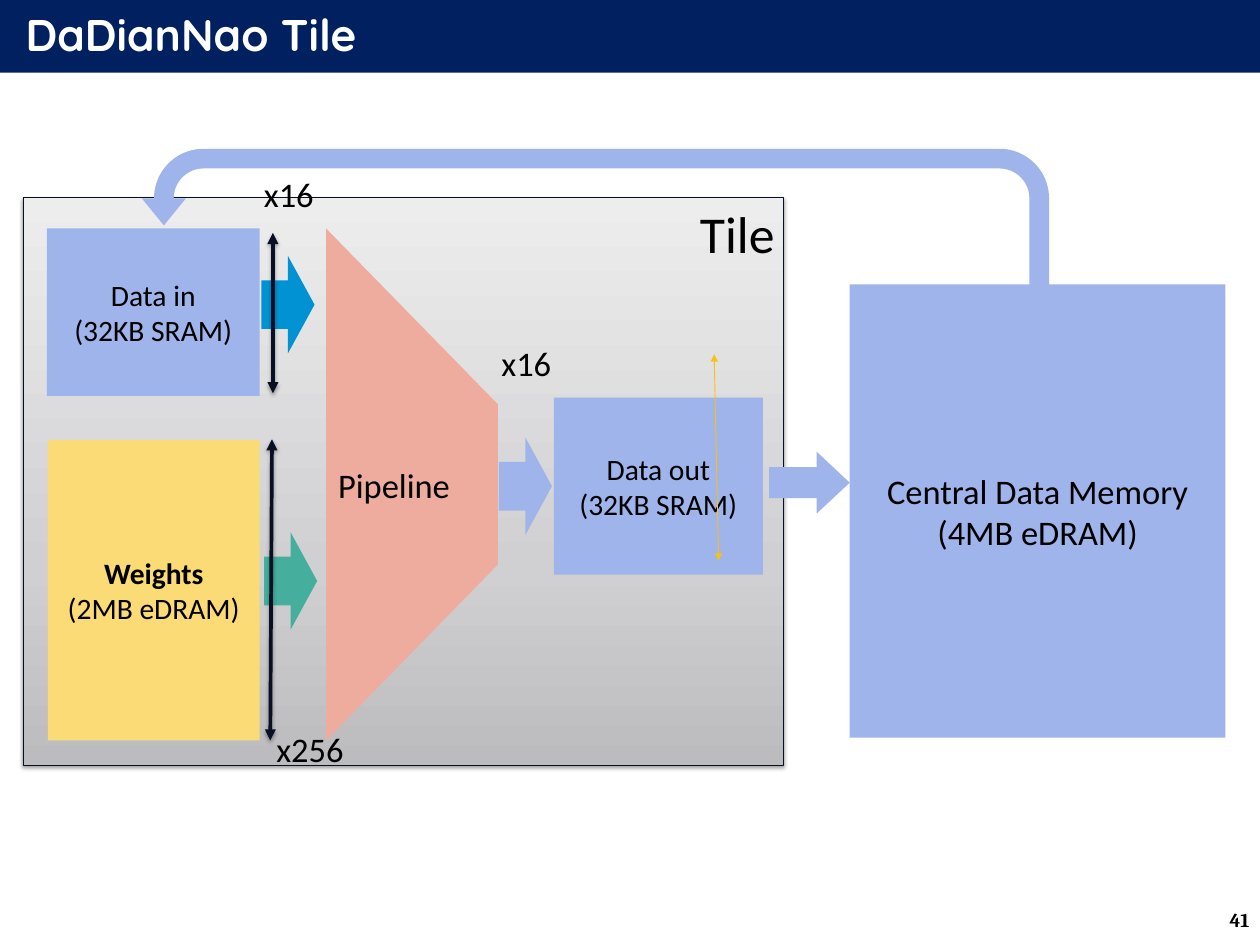
from dataclasses import dataclass
from typing import Optional

from lxml import etree
from pptx import Presentation
from pptx.dml.color import RGBColor
from pptx.enum.shapes import MSO_CONNECTOR, MSO_SHAPE
from pptx.enum.text import MSO_ANCHOR, MSO_AUTO_SIZE, PP_ALIGN
from pptx.oxml.ns import qn
from pptx.util import Emu, Pt

RECTANGLE = MSO_SHAPE.RECTANGLE
TRAPEZOID = MSO_SHAPE.TRAPEZOID
RIGHT_ARROW = MSO_SHAPE.RIGHT_ARROW
U_TURN_ARROW = MSO_SHAPE.U_TURN_ARROW
STRAIGHT = MSO_CONNECTOR.STRAIGHT
LEFT, CENTER, RIGHT = PP_ALIGN.LEFT, PP_ALIGN.CENTER, PP_ALIGN.RIGHT
TOP, MIDDLE = MSO_ANCHOR.TOP, MSO_ANCHOR.MIDDLE
FIXED, GROW = MSO_AUTO_SIZE.NONE, MSO_AUTO_SIZE.SHAPE_TO_FIT_TEXT
EMU_PER_PX = 9144
TITLE_ONLY = 5


@dataclass(frozen=True)
class Theme:
    navy: str = "002060"
    white: str = "FFFFFF"
    black: str = "000000"
    memory: str = "9FB4EA"
    weights: str = "FBDB76"
    pipeline: str = "EDAC9E"
    data_arrow: str = "0092D2"
    weight_arrow: str = "46AE9D"
    output_span: str = "F9C115"
    input_span: str = "081025"
    tile_border: str = "070F25"
    tile_gradient: tuple = ((0, "BCBCBF"), (35, "D0D0D2"), (100, "EDEDEE"))
    body_font: str = "Calibri"
    title_font: str = "Quicksand"
    number_font: str = "Cambria"
    tile_size: int = 42
    title_size: int = 36
    large_size: int = 28
    block_size: int = 24
    number_size: int = 16


THEME = Theme()


@dataclass(frozen=True)
class Box:
    left: int
    top: int
    width: int
    height: int


@dataclass(frozen=True)
class TextStyle:
    size: int
    align: PP_ALIGN = CENTER
    anchor: MSO_ANCHOR = MIDDLE
    font: str = THEME.body_font
    color: str = THEME.black
    bold: bool = False


@dataclass(frozen=True)
class Block:
    box: Box
    fill: str
    lines: tuple[str, ...] = ()
    size: int = THEME.block_size
    bold_first: bool = False


@dataclass(frozen=True)
class Arrow:
    box: Box
    fill: str
    kind: MSO_SHAPE = RIGHT_ARROW
    adjustments: tuple[float, ...] = ()


@dataclass(frozen=True)
class Span:
    start: tuple[int, int]
    end: tuple[int, int]
    color: str
    width: float
    shadow_opacity: Optional[int] = None


@dataclass(frozen=True)
class Label:
    text: str
    box: Box
    style: TextStyle = TextStyle(THEME.large_size, LEFT, TOP)
    resize: MSO_AUTO_SIZE = GROW


TILE = Box(26, 223, 858, 641)
TITLE_BAR = Box(0, -6, 1422, 88)
PIPELINE = Box(176, 450, 578, 194)

BLOCKS = (
    Block(Box(959, 321, 424, 512), THEME.memory, ("Central Data Memory", "(4MB eDRAM)"), THEME.large_size),
    Block(Box(53, 258, 240, 189), THEME.memory, ("Data in", "(32KB SRAM)")),
    Block(Box(54, 497, 239, 339), THEME.weights, ("Weights", "(2MB eDRAM)"), bold_first=True),
    Block(Box(625, 449, 236, 200), THEME.memory, ("Data out", "(32KB SRAM)")),
)
ARROWS = (
    Arrow(Box(563, 494, 60, 110), THEME.memory),
    Arrow(Box(295, 289, 60, 110), THEME.data_arrow),
    Arrow(Box(298, 601, 60, 110), THEME.weight_arrow),
    Arrow(Box(868, 510, 91, 70), THEME.memory, adjustments=(0.5, 0.534)),
    Arrow(Box(160, 168, 1024, 229), THEME.memory, U_TURN_ARROW, (0.097, 0.109, 0.134, 0.438, 0.378)),
)
SPANS = (
    Span((806, 400), (811, 633), THEME.output_span, 0.75),
    Span((308, 263), (308, 444), THEME.input_span, 3, 35),
    Span((307, 496), (305, 836), THEME.input_span, 3, 35),
)
LABELS = (
    Label("x16", Box(556, 381, 118, 57)),
    Label("x16", Box(288, 191, 118, 57)),
    Label("x256", Box(302, 817, 118, 57)),
    Label("41", Box(1088, 1010, 332, 57),
          TextStyle(THEME.number_size, RIGHT, font=THEME.number_font, bold=True), FIXED),
)


def px(length: int) -> Emu:
    return Emu(length * EMU_PER_PX)


def frame(box: Box) -> tuple[Emu, ...]:
    return px(box.left), px(box.top), px(box.width), px(box.height)


def write_text(shape, lines: tuple[str, ...], style: TextStyle, bold_first: bool = False) -> None:
    text_frame = shape.text_frame
    text_frame.word_wrap = True
    text_frame.vertical_anchor = style.anchor
    for index, line in enumerate(lines):
        paragraph = text_frame.add_paragraph() if index else text_frame.paragraphs[0]
        paragraph.alignment = style.align
        run = paragraph.add_run()
        run.text = line
        run.font.name = style.font
        run.font.size = Pt(style.size)
        run.font.bold = style.bold or (bold_first and index == 0)
        run.font.color.rgb = RGBColor.from_string(style.color)


def add_shape(slide, kind: MSO_SHAPE, box: Box, fill: str, adjustments: tuple[float, ...] = ()):
    shape = slide.shapes.add_shape(kind, *frame(box))
    shape.shadow.inherit = False
    shape.fill.solid()
    shape.fill.fore_color.rgb = RGBColor.from_string(fill)
    shape.line.fill.background()
    for index, value in enumerate(adjustments):
        shape.adjustments[index] = value
    return shape


def add_color(parent, color: str):
    return etree.SubElement(parent, qn("a:srgbClr"), val=color)


def add_shadow(effects, opacity: int, distance: float) -> None:
    shadow = etree.SubElement(effects, qn("a:outerShdw"), blurRad=str(Pt(3.1)), dist=str(Pt(distance)),
                              dir="5400000", rotWithShape="0")
    etree.SubElement(add_color(shadow, THEME.black), qn("a:alpha"), val=str(opacity * 1000))


def add_tile(slide) -> None:
    tile = add_shape(slide, RECTANGLE, TILE, THEME.white)
    tile.fill.gradient()
    tile.fill.gradient_angle = 90
    properties = tile._element.spPr
    stops = properties.find(qn("a:gradFill")).find(qn("a:gsLst"))
    stops.clear()
    for position, color in THEME.tile_gradient:
        add_color(etree.SubElement(stops, qn("a:gs"), pos=str(position * 1000)), color)
    tile.line.color.rgb = RGBColor.from_string(THEME.tile_border)
    tile.line.width = Pt(0.75)
    add_shadow(properties.find(qn("a:effectLst")), 38, 1.6)
    write_text(tile, ("Tile",), TextStyle(THEME.tile_size, RIGHT, TOP))


def format_title(title) -> None:
    title.left, title.top, title.width, title.height = frame(TITLE_BAR)
    title.fill.solid()
    title.fill.fore_color.rgb = RGBColor.from_string(THEME.navy)
    text_frame = title.text_frame
    text_frame.auto_size = FIXED
    text_frame.margin_left = px(29)
    text_frame.margin_top = text_frame.margin_right = text_frame.margin_bottom = 0
    write_text(title, ("DaDianNao Tile",),
               TextStyle(THEME.title_size, LEFT, font=THEME.title_font, color=THEME.white, bold=True))


def add_pipeline(slide) -> None:
    pipeline = add_shape(slide, TRAPEZOID, PIPELINE, THEME.pipeline, (1.024,))
    pipeline.rotation = 90
    pipeline.text_frame._txBody.bodyPr.set("vert", "vert270")
    write_text(pipeline, ("Pipeline",), TextStyle(THEME.large_size, RIGHT))


def add_span(slide, span: Span) -> None:
    connector = slide.shapes.add_connector(STRAIGHT, *map(px, span.start + span.end))
    connector.line.color.rgb = RGBColor.from_string(span.color)
    connector.line.width = Pt(span.width)
    properties = connector._element.spPr
    line = properties.find(qn("a:ln"))
    for end in ("a:headEnd", "a:tailEnd"):
        etree.SubElement(line, qn(end), type="triangle")
    effects = etree.SubElement(properties, qn("a:effectLst"))
    if span.shadow_opacity is not None:
        add_shadow(effects, span.shadow_opacity, 1.8)


def add_label(slide, label: Label) -> None:
    text_box = slide.shapes.add_textbox(*frame(label.box))
    write_text(text_box, (label.text,), label.style)
    text_box.text_frame.auto_size = label.resize


def main() -> None:
    presentation = Presentation()
    presentation.slide_width, presentation.slide_height = px(1422), px(1067)
    slide = presentation.slides.add_slide(presentation.slide_layouts[TITLE_ONLY])
    format_title(slide.shapes.title)
    add_tile(slide)
    for block in BLOCKS:
        shape = add_shape(slide, RECTANGLE, block.box, block.fill)
        write_text(shape, block.lines, TextStyle(block.size), block.bold_first)
    add_pipeline(slide)
    for arrow in ARROWS:
        shape = add_shape(slide, arrow.kind, arrow.box, arrow.fill, arrow.adjustments)
        if arrow.kind == U_TURN_ARROW:
            shape._element.spPr.find(qn("a:xfrm")).set("flipH", "1")
    for span in SPANS:
        add_span(slide, span)
    for label in LABELS:
        add_label(slide, label)
    presentation.save("out.pptx")


if __name__ == "__main__":
    main()
